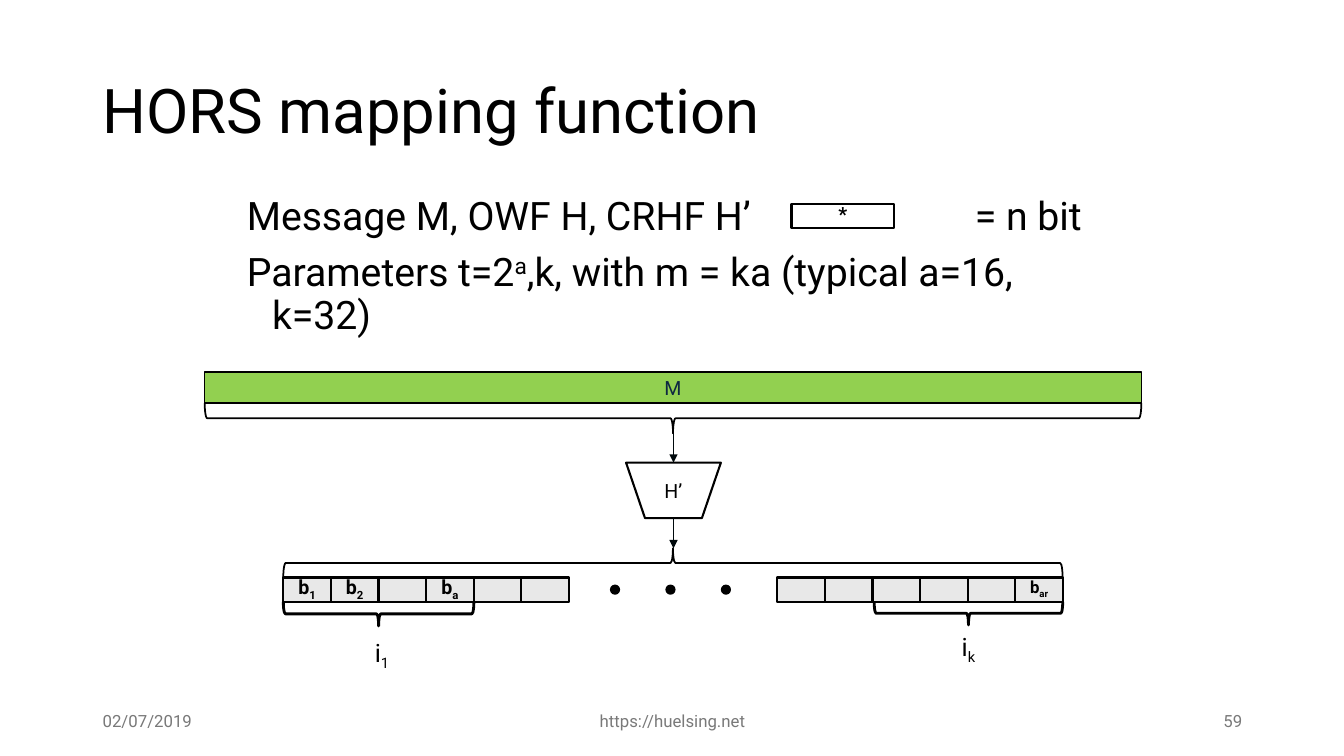
from lxml import etree
from pptx import Presentation
from pptx.dml.color import RGBColor
from pptx.enum.shapes import MSO_CONNECTOR as Line, MSO_SHAPE as Shape
from pptx.enum.text import MSO_ANCHOR as Anchor, PP_ALIGN as Align
from pptx.oxml.ns import qn
from pptx.util import Pt

# Content: text is a list of (text, baseline percent) runs
TITLE = [("HORS mapping function", 0)]
INTRO = [
    [("Message M, OWF H, CRHF H’", 0)],
    [("Parameters t=2", 0), ("a", 30), (",k, with m = ka (typical a=16, k=32)", 0)],
]
BLOCK_SIZE = [("= n bit", 0)]
FOOTER = [  # left, width, text, alignment
    (92, 300, "02/07/2019", Align.LEFT),
    (442, 450, "https://huelsing.net", Align.CENTER),
    (942, 300, "59", Align.RIGHT),
]
BIT_GROUPS = [  # left of the group, (letter, subscript, size) of each bit
    (281, [("b", "1", 14), ("b", "2", 14), None, ("b", "a", 14), None, None]),
    (771, [None, None, None, None, None, ("b", "ar", 12)]),
]
INDEXES = [(362, 627, "1"), (944, 621, "k")]  # left, top, subscript
BRACES = [  # left, top, width, height, rotation, line width
    (203, 400, 929, 30, 90, 1.25),
    (281, 544, 773, 29, 270, 1.25),
    (281, 597, 189, 24, 90, 2),
    (867, 597, 187, 23, 90, 2),
]
COLORS = {"ink": "000000", "footer": "797979", "bit": "E8E8E8",
          "message": "92D050", "message_text": "0E2841", "arrow": "00090C"}
FONT = "Roboto"
PX = 9144  # 100 px to the inch
BIT_PITCH, BIT_TOP, BIT_HEIGHT = 47.2, 573, 24
DOT_LEFT, DOT_PITCH, DOT_SIZE = 606, 55, 8
CENTER_X = 668

prs = Presentation()
prs.slide_width, prs.slide_height = 1333 * PX, 750 * PX
slide = prs.slides.add_slide(prs.slide_layouts[6])


def emu(*lengths):
    return [round(length * PX) for length in lengths]


def rgb(name):
    return RGBColor.from_string(COLORS[name])


def write(paragraph, runs, size, color="ink", align=Align.LEFT, bold=False):
    paragraph.alignment = align
    font = paragraph.font
    font.name, font.size, font.bold = FONT, Pt(size), bold
    font.color.rgb = rgb(color)
    for text, baseline in runs:
        run = paragraph.add_run()
        run.text = text
        if baseline:
            run._r.get_or_add_rPr().set("baseline", str(baseline * 1000))


def add_text(box, runs, size, anchor=Anchor.TOP, **style):
    frame = slide.shapes.add_textbox(*emu(*box)).text_frame
    frame.word_wrap, frame.vertical_anchor = True, anchor
    write(frame.paragraphs[0], runs, size, **style)
    return frame


def add_shape(kind, box, fill=None, width=1.5):
    shape = slide.shapes.add_shape(kind, *emu(*box))
    shape.shadow.inherit = False
    if fill:
        shape.fill.solid()
        shape.fill.fore_color.rgb = rgb(fill)
    else:
        shape.fill.background()
    shape.line.color.rgb = rgb("ink")
    shape.line.width = Pt(width)
    return shape


def label(shape, runs, size, color="ink", bold=False, bottom=5):
    frame = shape.text_frame
    frame.word_wrap, frame.vertical_anchor = False, Anchor.MIDDLE
    frame.margin_top, frame.margin_bottom = emu(5, bottom)
    write(frame.paragraphs[0], runs, size, color, Align.CENTER, bold)


def add_arrow(top, bottom):
    arrow = slide.shapes.add_connector(
        Line.STRAIGHT, *emu(CENTER_X, top, CENTER_X, bottom))
    arrow.line.color.rgb = rgb("arrow")
    arrow.line.width = Pt(1.25)
    etree.SubElement(arrow.line._get_or_add_ln(), qn("a:tailEnd"), type="triangle")
    etree.SubElement(arrow._element.spPr, qn("a:effectLst"))
    return arrow


# Title and introduction, with the key of the block beside its first line
title = add_text((92, 40, 1150, 145), TITLE, 44, Anchor.MIDDLE)
title.paragraphs[0].line_spacing = 0.9

intro = add_text((235, 190, 874, 160), INTRO[0], 28)
write(intro.add_paragraph(), INTRO[1], 28)
block_size = add_text((957, 190, 150, 50), BLOCK_SIZE, 28)
for paragraph in intro.paragraphs + block_size.paragraphs:
    paragraph.line_spacing, paragraph.space_before = 0.9, Pt(10)
hanging, = emu(25)
for paragraph in intro.paragraphs:
    properties = paragraph._p.get_or_add_pPr()
    properties.set("marL", str(hanging))
    properties.set("indent", str(-hanging))

block = add_shape(Shape.RECTANGLE, (785, 202, 102, 24))
label(block, [("*", 0)], 14, bold=True, bottom=8)

# Message and hash function
message = add_shape(Shape.RECTANGLE, (203, 369, 929, 31), "message", 1)
label(message, [("M", 0)], 14, "message_text")
hash_function = add_shape(Shape.FLOWCHART_MANUAL_OPERATION, (621, 459, 94, 55))
label(hash_function, [("H’", 0)], 14)
add_arrow(430, 459).end_connect(hash_function, 0)
add_arrow(514, 544).begin_connect(hash_function, 2)

# Bits of the digest
for left, bits in BIT_GROUPS:
    for column, bit in enumerate(bits):
        cell = add_shape(Shape.RECTANGLE, (left + column * BIT_PITCH, BIT_TOP,
                                           BIT_PITCH, BIT_HEIGHT), "bit")
        if bit:
            letter, subscript, size = bit
            label(cell, [(letter, 0), (subscript, -25)], size, bold=True, bottom=8)
for dot in range(3):
    add_shape(Shape.OVAL, (DOT_LEFT + dot * DOT_PITCH, 581, DOT_SIZE, DOT_SIZE), "ink")

# Braces: a turned shape is placed by its unturned box about the same centre
for left, top, width, height, rotation, weight in BRACES:
    turned = (left + (width - height) / 2, top + (height - width) / 2, height, width)
    add_shape(Shape.RIGHT_BRACE, turned, width=weight).rotation = rotation

# Indexes and footer
for left, top, subscript in INDEXES:
    add_text((left, top, 47, 40), [("i", 0), (subscript, -25)], 18)
for left, width, text, align in FOOTER:
    add_text((left, 695, width, 40), [(text, 0)], 12, Anchor.MIDDLE,
             color="footer", align=align)

prs.save("out.pptx")
